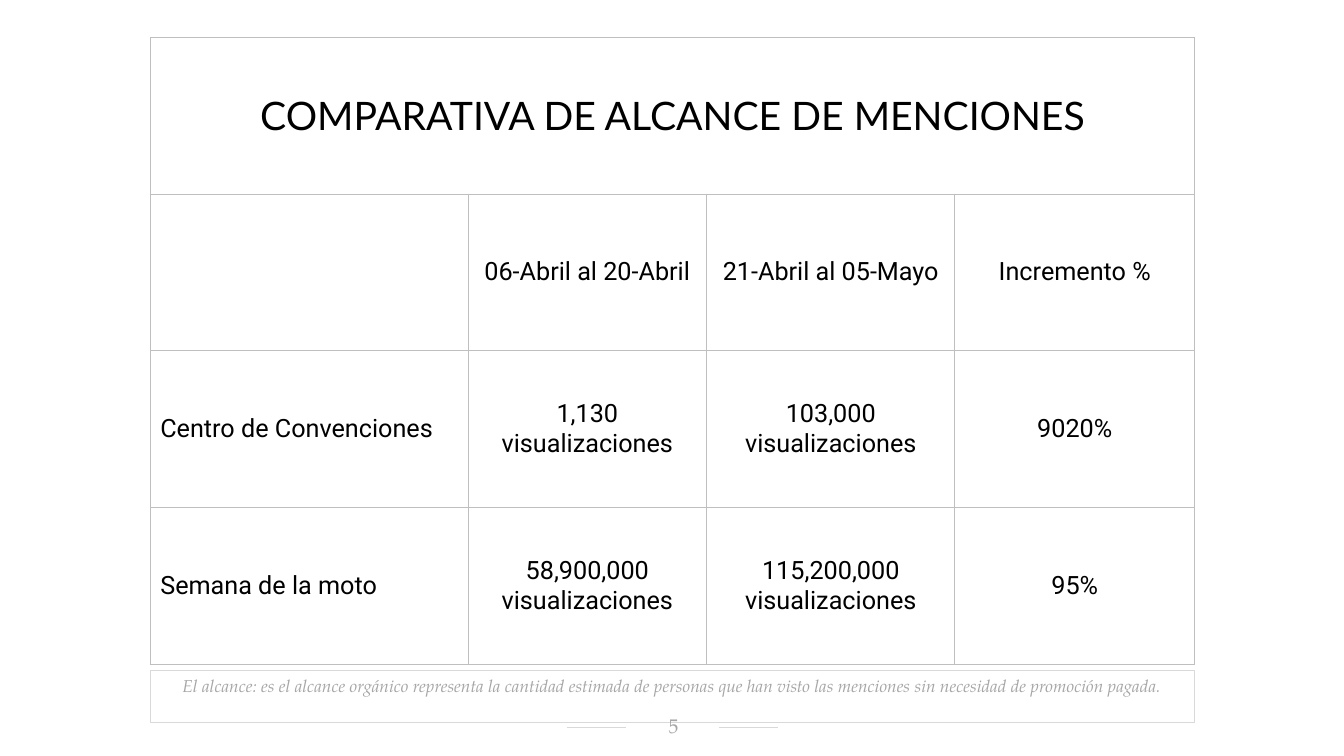
import dataclasses

import lxml.etree
import pptx
import pptx.dml.color
import pptx.enum.shapes
import pptx.enum.text
import pptx.oxml.ns
import pptx.util

Inches = pptx.util.Inches
Pt = pptx.util.Pt
Align = pptx.enum.text.PP_ALIGN
Anchor = pptx.enum.text.MSO_ANCHOR
qn = pptx.oxml.ns.qn


@dataclasses.dataclass(frozen=True)
class Theme:
    """Colours, fonts and type sizes of the slide."""
    ink: str = "000000"
    muted: str = "A6A6A6"
    rule: str = "D9D9D9"
    grid: str = "BFBFBF"
    heading_font: str = "Lato"
    table_font: str = "Roboto"
    note_font: str = "TeX Gyre Pagella"
    heading_size: float = 28
    table_size: float = 18
    note_size: float = 12.3
    page_size: float = 14.1


THEME = Theme()
HEADING = "COMPARATIVA DE ALCANCE DE MENCIONES"
REACH_ROWS = [
    ["", "06-Abril al 20-Abril", "21-Abril al 05-Mayo", "Incremento %"],
    ["Centro de Convenciones", "1,130 visualizaciones", "103,000 visualizaciones", "9020%"],
    ["Semana de la moto", "58,900,000 visualizaciones", "115,200,000 visualizaciones", "95%"],
]
COLUMN_WIDTHS = [3.15, 2.37, 2.46, 2.38]
NOTE = ("El alcance: es el alcance orgánico representa la cantidad estimada de personas "
        "que han visto las menciones sin necesidad de promoción pagada.")


def rgb(colour):
    """Turn a hex string into a colour."""
    return pptx.dml.color.RGBColor.from_string(colour)


def write(frame, text, *, font, size, colour, align=Align.CENTER, italic=False):
    """Put formatted text in a text frame."""
    frame.word_wrap = True
    paragraph = frame.paragraphs[0]
    paragraph.alignment = align
    run = paragraph.add_run()
    run.text = text
    run.font.name = font
    run.font.size = Pt(size)
    run.font.italic = italic
    run.font.color.rgb = rgb(colour)


def outline_cell(cell):
    """Clear the fill of a cell and draw its four borders."""
    cell.fill.background()
    properties = cell._tc.get_or_add_tcPr()
    for position, side in enumerate(("a:lnL", "a:lnR", "a:lnT", "a:lnB")):
        border = lxml.etree.Element(qn(side), w=str(Pt(0.5)))
        fill = lxml.etree.SubElement(border, qn("a:solidFill"))
        lxml.etree.SubElement(fill, qn("a:srgbClr"), val=THEME.grid)
        properties.insert(position, border)


def add_reach_table(slide, left, top, width, height):
    """Draw the comparison table with its heading across the first row."""
    row_count = len(REACH_ROWS) + 1
    table = slide.shapes.add_table(
        row_count, len(COLUMN_WIDTHS),
        Inches(left), Inches(top), Inches(width), Inches(height)).table
    table.first_row = table.horz_banding = False
    for column, column_width in zip(table.columns, COLUMN_WIDTHS):
        column.width = Inches(column_width)
    for row in table.rows:
        row.height = Inches(height / row_count)
    for cell in table.iter_cells():
        outline_cell(cell)
        cell.vertical_anchor = Anchor.MIDDLE

    heading = table.cell(0, 0)
    heading.merge(table.cell(0, len(COLUMN_WIDTHS) - 1))
    write(heading.text_frame, HEADING, font=THEME.heading_font,
          size=THEME.heading_size, colour=THEME.ink)
    for row_index, entries in enumerate(REACH_ROWS, start=1):
        for column_index, entry in enumerate(entries):
            write(table.cell(row_index, column_index).text_frame, entry,
                  font=THEME.table_font, size=THEME.table_size, colour=THEME.ink,
                  align=Align.CENTER if column_index else Align.LEFT)


def add_note(slide, left, top, width, height):
    """Draw the framed definition of reach."""
    note = slide.shapes.add_shape(
        pptx.enum.shapes.MSO_SHAPE.RECTANGLE,
        Inches(left), Inches(top), Inches(width), Inches(height))
    note.shadow.inherit = False
    note.fill.background()
    note.line.color.rgb = rgb(THEME.rule)
    note.line.width = Pt(0.75)
    note.text_frame.vertical_anchor = Anchor.TOP
    write(note.text_frame, NOTE, font=THEME.note_font, size=THEME.note_size,
          colour=THEME.muted, italic=True)


def add_page_number(slide, left, top, width, height):
    """Draw the page number with a short rule on either side."""
    rule_length, rule_y = 0.59, top + 0.12
    for start in (left + 0.01 - rule_length, left + width - 0.01):
        rule = slide.shapes.add_connector(
            pptx.enum.shapes.MSO_CONNECTOR.STRAIGHT, Inches(start), Inches(rule_y),
            Inches(start + rule_length), Inches(rule_y))
        rule.line.color.rgb = rgb(THEME.rule)
        rule.line.width = Pt(0.5)
        lxml.etree.SubElement(rule._element.spPr, qn("a:effectLst"))

    number = slide.shapes.add_textbox(
        Inches(left), Inches(top), Inches(width), Inches(height)).text_frame
    number.vertical_anchor = Anchor.MIDDLE
    number.margin_left, number.margin_right = Inches(0.12), Inches(0.1)
    number.margin_top, number.margin_bottom = Inches(0.02), Inches(0.05)
    write(number, "5", font=THEME.note_font, size=THEME.page_size, colour=THEME.muted)


def main():
    """Build the slide and save it."""
    deck = pptx.Presentation()
    deck.slide_width, deck.slide_height = Inches(13.33), Inches(7.5)
    slide = deck.slides.add_slide(deck.slide_layouts[6])
    left, width = 1.49, sum(COLUMN_WIDTHS)
    add_note(slide, left, 6.65, width, 0.52)
    add_page_number(slide, 6.2, 7.1, 0.94, 0.23)
    add_reach_table(slide, left, 0.37, width, 6.22)
    deck.save("out.pptx")


if __name__ == "__main__":
    main()
